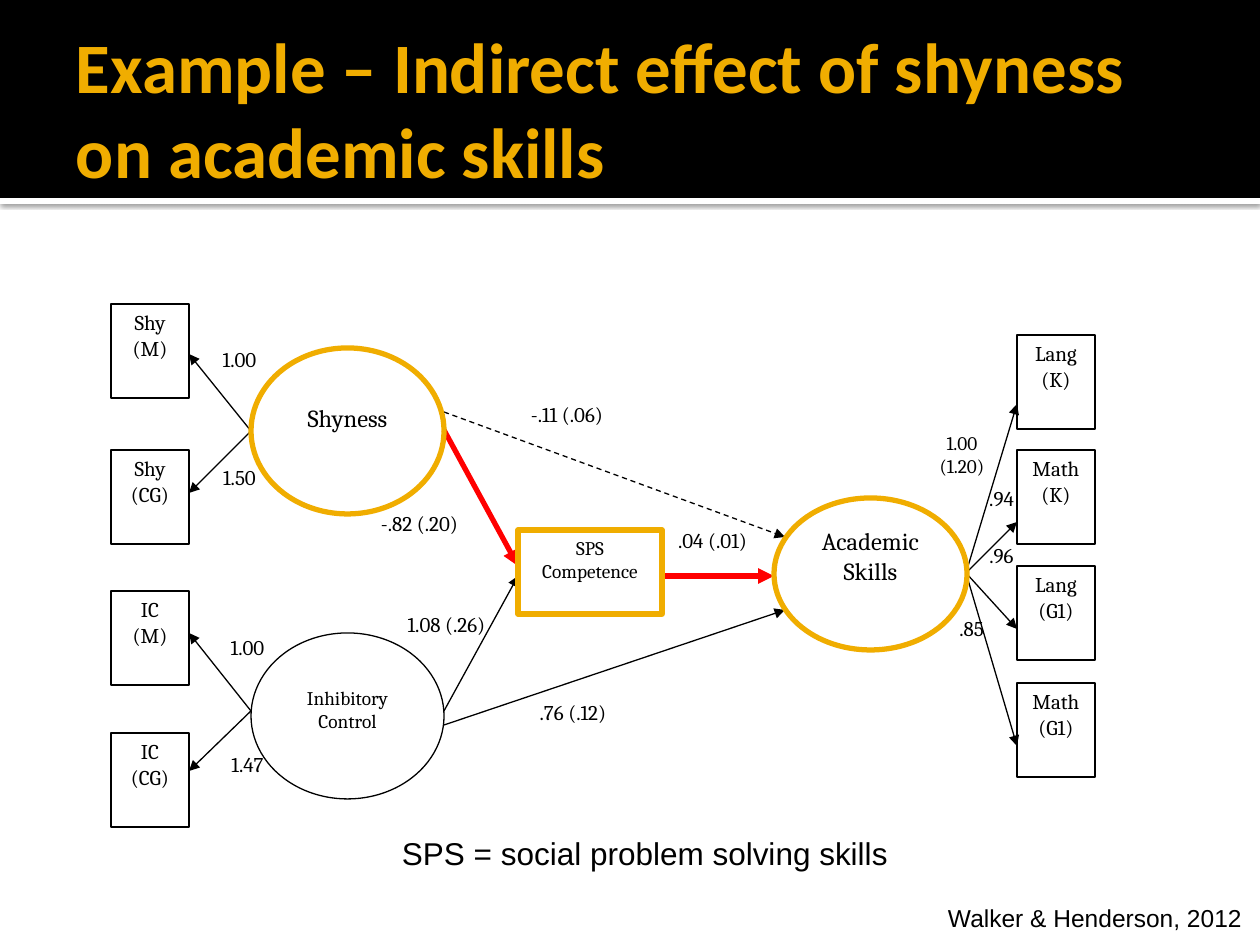
from lxml import etree
from pptx import Presentation
from pptx import util as u
from pptx.dml.color import RGBColor
from pptx.enum import dml, shapes, text
from pptx.oxml import parse_xml
from pptx.oxml.ns import nsdecls, qn

BLACK = RGBColor(0, 0, 0)
WHITE = RGBColor(255, 255, 255)
GOLD = RGBColor(0xF0, 0xAD, 0)
RED = RGBColor(255, 0, 0)
RECT, OVAL = shapes.MSO_SHAPE.RECTANGLE, shapes.MSO_SHAPE.OVAL
THIN, THICK = 0.75, 3

# Content, lengths in px (126 to the inch)
TITLE = "Example – Indirect effect of shyness on academic skills"
NOTES = [  # words, left, top, width, height, size
    ("Walker & Henderson, 2012", 935, 897, 321, 43, 14),
    ("SPS = social problem solving skills", 389, 828, 515, 50, 18),
]
LABELS = [  # words, left, top, width
    ("-.82 (.20)", 359, 505, 121), ("1.08 (.26)", 389, 606, 115),
    (".76 (.12)", 524, 694, 98), (".04 (.01)", 660, 522, 105),
    ("-.11 (.06)", 518, 396, 98), ("1.00 (1.20)", 924, 425, 76),
    (".85", 944, 610, 55), (".94", 974, 480, 55), (".96", 974, 537, 55),
    ("1.47", 212, 746, 71), ("1.00", 212, 629, 71),
    ("1.50", 204, 459, 71), ("1.00", 204, 341, 71),
]
SMALL = "1.00 (1.20)"
ITEMS = {  # left of column: (words, top)
    111: [("Shy (M)", 304), ("Shy (CG)", 450), ("IC (M)", 591), ("IC (CG)", 733)],
    1017: [("Lang (K)", 335), ("Math (K)", 450), ("Lang (G1)", 566), ("Math (G1)", 683)],
}
FANS = [  # start of loadings, x of ends, y of ends
    ((251, 431), 189, (354, 493)),
    ((251, 711), 189, (633, 771)),
    ((966, 573), 1017, (404, 522, 629, 746)),
]
PATHS = [  # start, end, colour, width, dashed
    ((444, 430), (518, 566), RED, THICK, False),
    ((444, 711), (518, 576), BLACK, THIN, False),
    ((444, 412), (785, 537), BLACK, THIN, True),
    ((444, 725), (785, 610), BLACK, THIN, False),
    ((660, 576), (774, 576), RED, THICK, False),
]
FACTORS = [  # words, kind, left, top, width, height, colour, width, size, top inset
    ("Academic Skills", OVAL, 774, 498, 193, 152, GOLD, THICK, 14, 6),
    ("Shyness", OVAL, 251, 348, 193, 166, GOLD, THICK, 14, 31),
    ("Inhibitory Control", OVAL, 251, 633, 193, 166, BLACK, THIN, 11, 29),
    ("SPS Competence", RECT, 518, 530, 144, 84, GOLD, THICK, 11, 6),
]


def px(n):
    return u.Emu(round(n * 914400 / 126))


def write(shape, words, size, font="Cambria", color=BLACK, bold=False,
          align=text.PP_ALIGN.CENTER, side=13, top=6, wrap=True,
          anchor=text.MSO_ANCHOR.TOP):
    frame = shape.text_frame
    frame.text = words
    fmt = dict(word_wrap=wrap, vertical_anchor=anchor, margin_left=px(side),
               margin_right=px(side), margin_top=px(top), margin_bottom=px(6))
    for key, val in fmt.items():
        setattr(frame, key, val)
    para = frame.paragraphs[0]
    para.alignment = align
    face = para.runs[0].font
    for key, val in dict(size=u.Pt(size), name=font, bold=bold).items():
        setattr(face, key, val)
    face.color.rgb = color


def block(kind, box, fill=None, line=None, width=THIN):
    shape = slide.shapes.add_shape(kind, *map(px, box))
    shape.shadow.inherit = False
    if fill is None:
        shape.fill.background()
    else:
        shape.fill.solid()
        shape.fill.fore_color.rgb = fill
    if line is None:
        shape.line.fill.background()
    else:
        shape.line.color.rgb = line
        shape.line.width = u.Pt(width)
    return shape


def arrow(start, end, color=BLACK, width=THIN, dashed=False):
    link = slide.shapes.add_connector(
        shapes.MSO_CONNECTOR.STRAIGHT, *map(px, start + end))
    link.line.color.rgb = color
    link.line.width = u.Pt(width)
    if dashed:
        link.line.dash_style = dml.MSO_LINE.DASH
    etree.SubElement(link.line._get_or_add_ln(), qn("a:tailEnd"), type="triangle")
    etree.SubElement(link.element.spPr, qn("a:effectLst"))


deck = Presentation()
deck.slide_width, deck.slide_height = px(1260), px(945)
slide = deck.slides.add_slide(deck.slide_layouts[5])

# Header bands behind the title
title = slide.shapes.title
strip = block(RECT, (0, 198, 1260, 6), WHITE)
strip.element.spPr.remove(strip.element.spPr.find(qn("a:effectLst")))
strip.element.spPr.append(parse_xml(
    f'<a:effectLst {nsdecls("a")}><a:outerShdw blurRad="31750" dist="10160" '
    'dir="5400000" algn="tl" rotWithShape="0"><a:srgbClr val="000000">'
    '<a:alpha val="60000"/></a:srgbClr></a:outerShdw></a:effectLst>'))
band = block(RECT, (0, 0, 1260, 198), BLACK)
for part in (strip, band):
    title.element.addprevious(part.element)
for key, val in dict(left=63, top=21, width=1134, height=173).items():
    setattr(title, key, px(val))
write(title, TITLE, 40.5, "Calibri", GOLD, True, text.PP_ALIGN.LEFT,
      anchor=text.MSO_ANCHOR.MIDDLE)
title.text_frame.auto_size = text.MSO_AUTO_SIZE.NONE

# Path coefficients
for words, left, top, wide in LABELS:
    tall, size = (67, 11) if words == SMALL else (54, 12)
    label = slide.shapes.add_textbox(*map(px, (left, top, wide, tall)))
    write(label, words, size, side=6)

# Measured items and their loadings
for left, rows in ITEMS.items():
    for words, top in rows:
        write(block(RECT, (left, top, 78, 94), line=BLACK), words, 12)
for start, x, ends in FANS:
    for y in ends:
        arrow(start, (x, y))

# Structural paths and factors
for path in PATHS:
    arrow(*path)
for words, kind, *box, color, width, size, inset in FACTORS:
    write(block(kind, box, line=color, width=width), words, size, top=inset)

# Key and citation
for words, *box, size in NOTES:
    note = slide.shapes.add_textbox(*map(px, box))
    write(note, words, size, "Arial", align=text.PP_ALIGN.LEFT, wrap=False)

deck.save("out.pptx")
